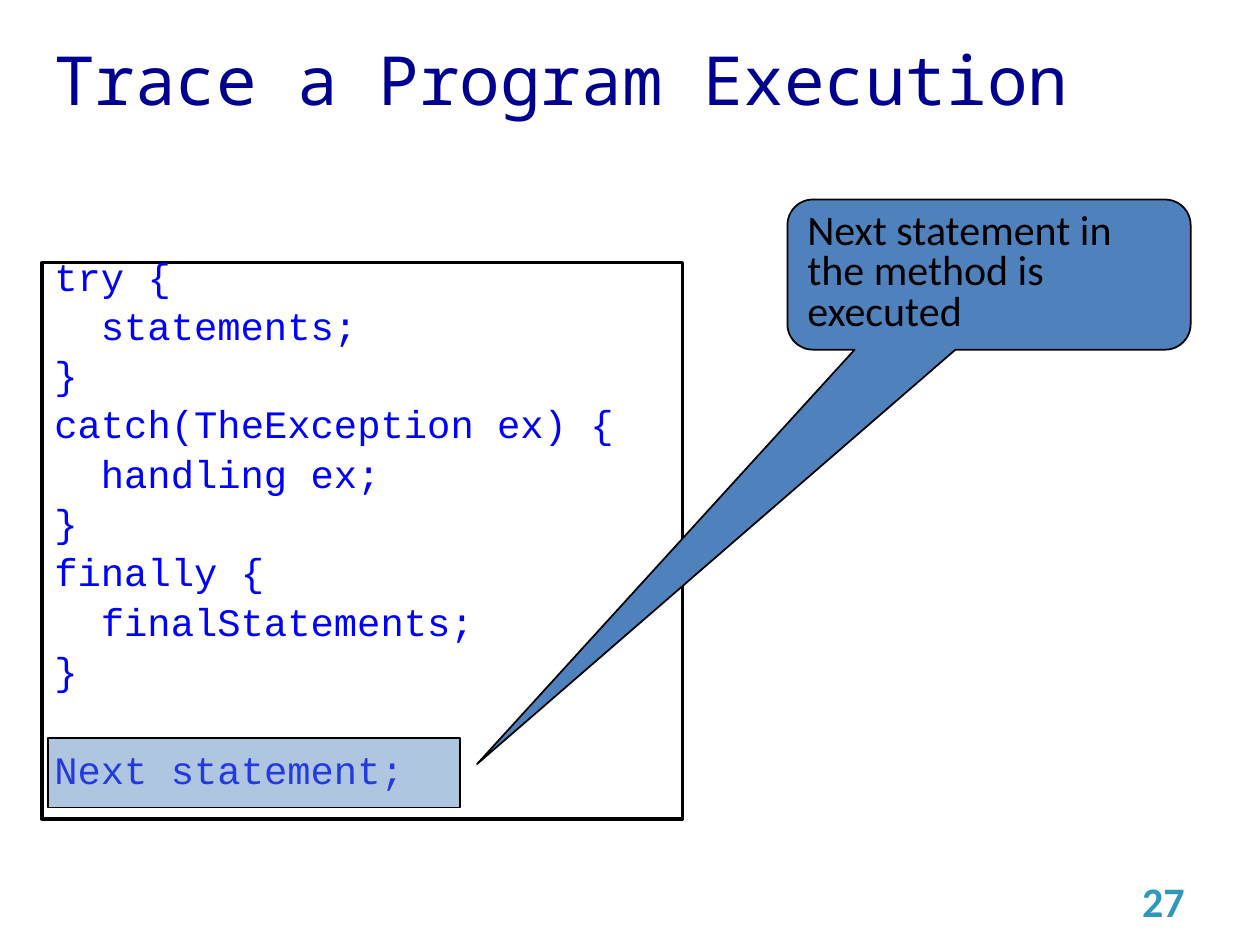
from dataclasses import dataclass
from typing import NamedTuple, Optional

from lxml.etree import SubElement
from pptx import Presentation
from pptx.dml.color import RGBColor as RGB
from pptx.enum.shapes import MSO_SHAPE as SHAPE
from pptx.enum.text import MSO_ANCHOR as ANCHOR, PP_ALIGN as ALIGN
from pptx.oxml.ns import qn
from pptx.util import Inches, Pt

COLS, ROWS = 120, 90


class Style(NamedTuple):
    font: str
    size: float
    color: str
    bold: bool = False


@dataclass(frozen=True)
class Theme:
    paper: str = "FFFFFF"
    ink: str = "000000"
    accent: str = "4F81BD"
    title: Style = Style("Noto Sans Mono", 38.7, "000090")
    code: Style = Style("Courier New", 22.2, "0000FF")
    note: Style = Style("Calibri", 24, "000000")
    number: Style = Style("Calibri", 24, "2E98BD", True)


@dataclass(frozen=True)
class Box:
    col: float
    row: float
    cols: float
    rows: float


@dataclass(frozen=True)
class Line:
    text: str
    level: int = 0
    after: float = 0


THEME = Theme()
CODE_SPACING, CODE_GAP, BLANK_LINE = 0.6, 12.2, 28.2
LEVEL_INDENT = Pt(26.6)

CODE = [
    Line("try {"),
    Line("statements;", 1),
    Line("}"),
    Line("catch(TheException ex) {"),
    Line("handling ex;", 1),
    Line("}"),
    Line("finally {"),
    Line("finalStatements;", 1),
    Line("}", after=BLANK_LINE),
    Line("Next statement;"),
]


def place(prs, box: Box) -> tuple:
    w, h = prs.slide_width / COLS, prs.slide_height / ROWS
    return tuple(round(v) for v in (box.col * w, box.row * h, box.cols * w, box.rows * h))


def write(sp, lines: list[Line], style: Style, anchor=ANCHOR.TOP,
          align=ALIGN.LEFT, spacing: float = 1, gap: float = 0) -> None:
    tf = sp.text_frame
    tf.word_wrap = True
    tf.vertical_anchor = anchor
    for i, line in enumerate(lines):
        p = tf.paragraphs[0] if i == 0 else tf.add_paragraph()
        p.text = line.text
        p.alignment = align
        p.line_spacing = spacing
        p.space_before = Pt(0)
        p.space_after = Pt(gap + line.after)
        p.font.name, p.font.size, p.font.bold = style.font, Pt(style.size), style.bold
        p.font.color.rgb = RGB.from_string(style.color)
        if line.level:
            p._p.get_or_add_pPr().set("marL", str(line.level * LEVEL_INDENT))


def add_text(prs, s, box: Box, text: str, style: Style, align=ALIGN.LEFT) -> None:
    write(s.shapes.add_textbox(*place(prs, box)), [Line(text)], style, ANCHOR.MIDDLE, align)


def add_panel(prs, s, kind, box: Box, fill: str, width: float, opacity: Optional[int] = None):
    sp = s.shapes.add_shape(kind, *place(prs, box))
    sp.shadow.inherit = False
    sp.fill.solid()
    sp.fill.fore_color.rgb = RGB.from_string(fill)
    sp.line.color.rgb = RGB.from_string(THEME.ink)
    sp.line.width = Pt(width)
    if opacity is not None:
        color = sp._element.spPr.find(qn("a:solidFill")).find(qn("a:srgbClr"))
        SubElement(color, qn("a:alpha")).set("val", str(opacity * 1000))
    return sp


def main() -> None:
    prs = Presentation()
    prs.slide_width, prs.slide_height = Inches(10), Inches(7.5)
    s = prs.slides.add_slide(prs.slide_layouts[6])

    add_text(prs, s, Box(4, 4, 107, 7), "Trace a Program Execution", THEME.title)

    listing = add_panel(prs, s, SHAPE.RECTANGLE, Box(4, 25, 61, 53), THEME.paper, 2)
    write(listing, CODE, THEME.code, spacing=CODE_SPACING, gap=CODE_GAP)

    callout = add_panel(prs, s, SHAPE.ROUNDED_RECTANGULAR_CALLOUT,
                        Box(75, 19, 38.4, 14.3), THEME.accent, 1)
    for i, value in enumerate((-1.27, 3.26, 0.17)):
        callout.adjustments[i] = value
    write(callout, [Line("Next statement in the method is executed")], THEME.note, spacing=0.8)

    add_panel(prs, s, SHAPE.RECTANGLE, Box(4.6, 70.3, 39.2, 6.6), THEME.accent, 1, opacity=45)
    add_text(prs, s, Box(86, 83.4, 28, 4.8), "27", THEME.number, ALIGN.RIGHT)

    prs.save("out.pptx")


if __name__ == "__main__":
    main()
